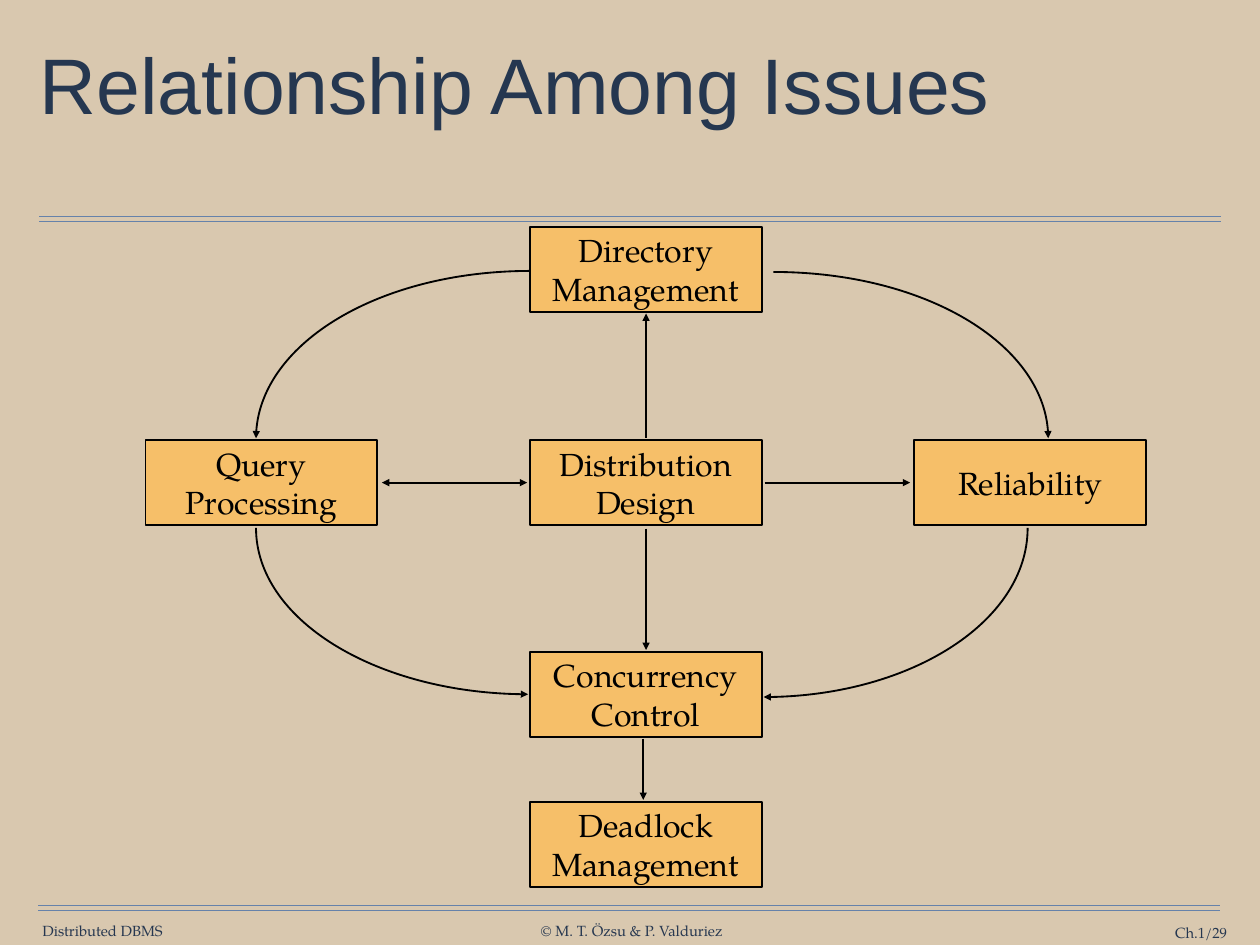
from dataclasses import dataclass

from lxml.etree import SubElement as Sub
from pptx import Presentation as Deck
from pptx.dml.color import RGBColor as Rgb
from pptx.enum.shapes import MSO_CONNECTOR as Link, MSO_SHAPE as Form
from pptx.enum.text import MSO_ANCHOR as Anchor, MSO_AUTO_SIZE as Fit, PP_ALIGN as Align
from pptx.oxml.ns import qn
from pptx.util import Cm, Pt


@dataclass(frozen=True)
class Theme:
    back: str = "D9C8AF"
    rule: str = "6682AA"
    head: str = "253750"
    foot: str = "263750"
    fill: str = "F6BF69"
    ink: str = "000000"
    sans: str = "Arial"
    serif: str = "TeX Gyre Pagella"
    big: float = 64
    mid: float = 26
    small: float = 12
    thin: float = 1
    thick: float = 1.5


@dataclass(frozen=True)
class Node:
    x: float
    y: float
    lines: tuple[str, ...]


@dataclass(frozen=True)
class Edge:
    x1: float
    y1: float
    x2: float
    y2: float
    both: bool = False


@dataclass(frozen=True)
class Bend:
    x1: float
    y1: float
    x2: float
    y2: float
    flat: bool


@dataclass(frozen=True)
class Note:
    x: float
    y: float
    wide: float
    text: str
    align: Align
    wrap: bool = False


look = Theme()
WIDE, HIGH = 6.65, 2.44
LEFT, MID, RIGHT = 4.17, 15.19, 26.21
ROW = 12.62
AXIS, LEVEL = 18.52, 13.84
CURVE = 0.55

nodes = (
    Node(MID, 6.5, ("Directory", "Management")),
    Node(RIGHT, ROW, ("Reliability",)),
    Node(MID, 22.99, ("Deadlock", "Management")),
    Node(LEFT, ROW, ("Query", "Processing")),
    Node(MID, 18.69, ("Concurrency", "Control")),
    Node(MID, ROW, ("Distribution", "Design")),
)
edges = (
    Edge(AXIS, 12.55, AXIS, 8.99),
    Edge(AXIS, 15.16, AXIS, 18.64),
    Edge(18.44, 21.18, 18.44, 22.94),
    Edge(21.92, LEVEL, 26.09, LEVEL),
    Edge(10.95, LEVEL, 15.11, LEVEL, both=True),
)
bends = (
    Bend(15.21, 7.77, 7.34, 12.57, flat=True),
    Bend(7.34, 15.14, 15.14, 19.91, flat=False),
    Bend(29.46, 15.14, 21.89, 19.99, flat=False),
    Bend(22.17, 7.8, 30.05, 12.57, flat=True),
)
rules = tuple(
    Edge(x, y + gap, x + 33.87, y + gap)
    for x, y in ((1.12, 6.2), (1.09, 25.96))
    for gap in (0, 0.15)
)
notes = (
    Note(1.19, 26.44, 3.51, "Distributed DBMS", Align.CENTER),
    Note(15.47, 26.44, 5.28, "© M. T. Özsu & P. Valduriez", Align.CENTER),
    Note(31.27, 26.49, 3.91, "Ch.1/29", Align.RIGHT, wrap=True),
)


def write(frame, lines: tuple[str, ...], face: str, size: float, tint: str, align: Align) -> None:
    for i, line in enumerate(lines):
        para = frame.add_paragraph() if i else frame.paragraphs[0]
        para.alignment = align
        run = para.add_run()
        run.text = line
        run.font.name = face
        run.font.size = Pt(size)
        run.font.color.rgb = Rgb.from_string(tint)


def inset(frame, side: float, edge: float, anchor: Anchor, wrap: bool = False) -> None:
    frame.auto_size = Fit.NONE
    frame.word_wrap = wrap
    frame.vertical_anchor = anchor
    frame.margin_left = frame.margin_right = Cm(side)
    frame.margin_top = frame.margin_bottom = Cm(edge)


def stroke(shape, tint: str, width: float) -> None:
    shape.line.color.rgb = Rgb.from_string(tint)
    shape.line.width = Pt(width)


def point(shape, both: bool = False) -> None:
    line = shape.element.spPr.find(qn("a:ln"))
    for tag in ("a:headEnd", "a:tailEnd") if both else ("a:tailEnd",):
        Sub(line, qn(tag), type="triangle")


def draw_title(slide, text: str) -> None:
    title = slide.shapes.title
    title.left, title.top, title.width, title.height = Cm(0.99), Cm(1.24), Cm(27.94), Cm(2.67)
    frame = title.text_frame
    inset(frame, 0.15, 0.15, Anchor.TOP)
    write(frame, (text,), look.sans, look.big, look.head, Align.LEFT)
    frame.paragraphs[0].line_spacing = 0.87


def draw_edge(slide, edge: Edge, tint: str, width: float):
    ends = [Cm(v) for v in (edge.x1, edge.y1, edge.x2, edge.y2)]
    line = slide.shapes.add_connector(Link.STRAIGHT, *ends)
    stroke(line, tint, width)
    Sub(line.element.spPr, qn("a:effectLst"))
    return line


def draw_node(slide, node: Node) -> None:
    box = slide.shapes.add_shape(Form.RECTANGLE, Cm(node.x), Cm(node.y), Cm(WIDE), Cm(HIGH))
    box.shadow.inherit = False
    box.fill.solid()
    box.fill.fore_color.rgb = Rgb.from_string(look.fill)
    stroke(box, look.ink, look.thick)
    inset(box.text_frame, 0.36, 0.18, Anchor.MIDDLE)
    write(box.text_frame, node.lines, look.serif, look.mid, look.ink, Align.CENTER)


def draw_bend(slide, bend: Bend) -> None:
    x1, y1, x2, y2 = bend.x1, bend.y1, bend.x2, bend.y2
    cx, cy = (x2, y1) if bend.flat else (x1, y2)
    spots = [(x + CURVE * (cx - x), y + CURVE * (cy - y)) for x, y in ((x1, y1), (x2, y2))]
    pen = slide.shapes.build_freeform(Cm(x1), Cm(y1))
    pen.add_line_segments([(Cm(x), Cm(y)) for x, y in (*spots, (x2, y2))], close=False)
    arc = pen.convert_to_shape()
    track = next(arc.element.iter(qn("a:path")))
    parts = track.findall(qn("a:lnTo"))
    cubic = Sub(track, qn("a:cubicBezTo"))
    for part in parts:
        cubic.append(part[0])
        track.remove(part)
    arc.shadow.inherit = False
    arc.fill.background()
    stroke(arc, look.ink, look.thick)
    point(arc)


def draw_note(slide, note: Note) -> None:
    box = slide.shapes.add_textbox(Cm(note.x), Cm(note.y), Cm(note.wide), Cm(0.51))
    inset(box.text_frame, 0, 0, Anchor.MIDDLE, note.wrap)
    write(box.text_frame, (note.text,), look.serif, look.small, look.foot, note.align)


def main() -> None:
    deck = Deck()
    deck.slide_width, deck.slide_height = Cm(36.12), Cm(27.1)
    slide = deck.slides.add_slide(deck.slide_layouts.get_by_name("Title Only"))
    slide.background.fill.solid()
    slide.background.fill.fore_color.rgb = Rgb.from_string(look.back)
    draw_title(slide, "Relationship Among Issues")
    for rule in rules:
        draw_edge(slide, rule, look.rule, look.thin)
    for note in notes:
        draw_note(slide, note)
    for node in nodes:
        draw_node(slide, node)
    for edge in edges:
        point(draw_edge(slide, edge, look.ink, look.thick), edge.both)
    for bend in bends:
        draw_bend(slide, bend)
    deck.save("out.pptx")


if __name__ == "__main__":
    main()
